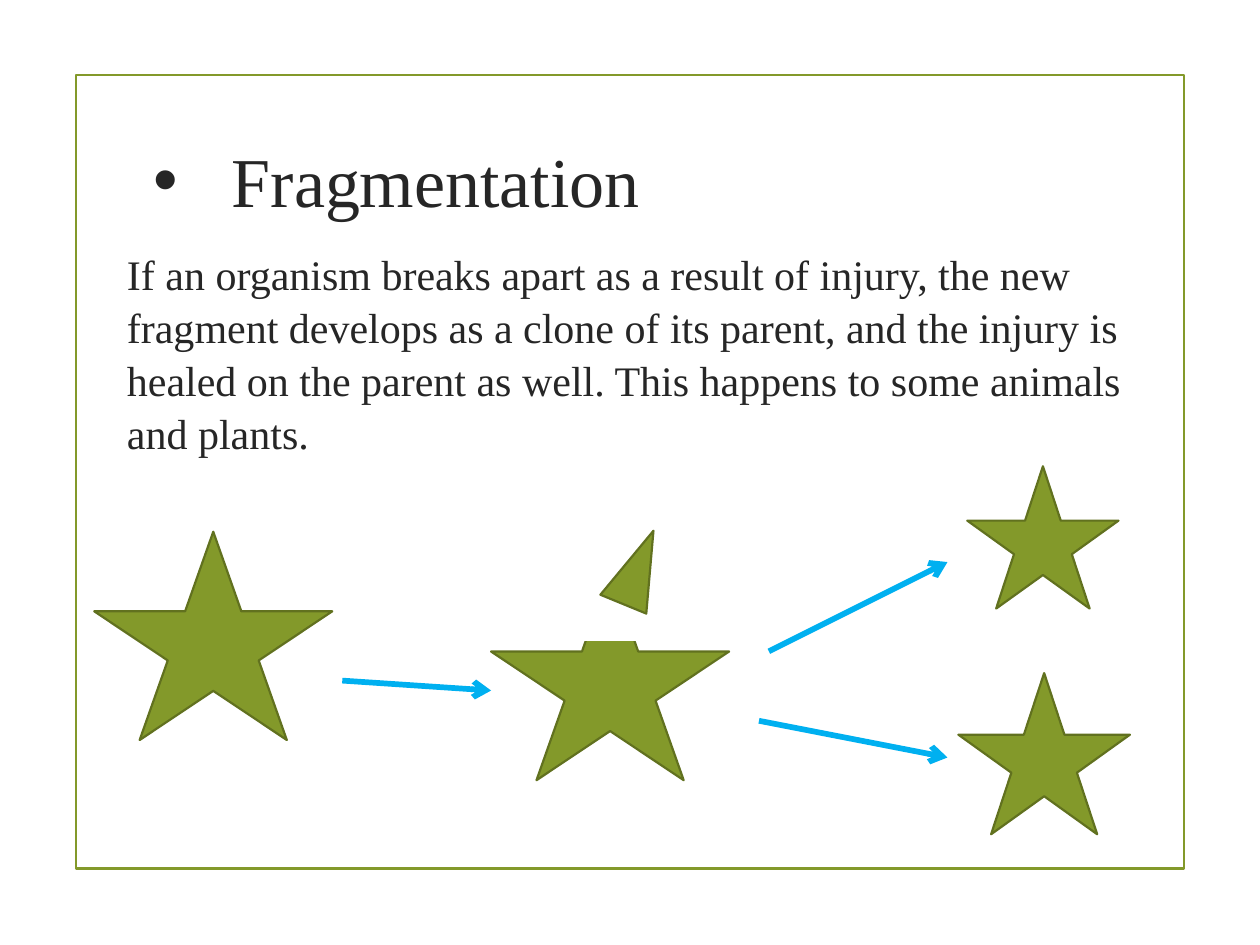
from lxml import etree
from pptx import Presentation
from pptx import util as u
from pptx.dml.color import RGBColor
from pptx.enum import shapes, text
from pptx.oxml import ns

GREEN = RGBColor(0x83, 0x99, 0x2A)
EDGE = RGBColor(0x61, 0x71, 0x1F)
BLUE = RGBColor(0x00, 0xB0, 0xF0)
INK = RGBColor(0x26, 0x26, 0x26)
WHITE = RGBColor(0xFF, 0xFF, 0xFF)
KIND = shapes.MSO_SHAPE

FACE = {"name": "Times New Roman", "bold": False}
BODY = (
    "If an organism breaks apart as a result of injury, the new fragment "
    "develops as a clone of its parent, and the injury is healed on the "
    "parent as well. This happens to some animals and plants."
)

# Left, top, width, height in cm
STARS = [
    (1.9, 10.72, 4.8, 4.2),
    (9.9, 11.53, 4.8, 4.2),
    (19.5, 9.4, 3.05, 2.87),
    (19.32, 13.57, 3.46, 3.25),
]
# Start x, y and end x, y in cm
ARROWS = [
    (6.9, 13.72, 9.9, 13.92),
    (15.5, 13.13, 19.1, 11.33),
    (15.3, 14.53, 19.1, 15.27),
]


def put(obj, vals):
    for key, val in vals.items():
        setattr(obj, key, val)


def cms(box):
    return [u.Cm(val) for val in box]


def sub(node, tag, **vals):
    return etree.SubElement(node, ns.qn(tag), **vals)


def add_form(slide, kind, box, fill=None, edge=None, turn=0):
    form = slide.shapes.add_shape(kind, *cms(box))
    put(form, {"rotation": turn})
    form.shadow.inherit = False
    if fill is None:
        form.fill.background()
    else:
        form.fill.solid()
        form.fill.fore_color.rgb = fill
    if edge is None:
        form.line.fill.background()
    else:
        form.line.color.rgb = edge
        form.line.width = u.Pt(1.25)


def add_arrow(slide, ends):
    line = slide.shapes.add_connector(shapes.MSO_CONNECTOR.STRAIGHT, *cms(ends))
    line.line.color.rgb = BLUE
    line.line.width = u.Pt(3.25)
    sub(line.line._get_or_add_ln(), "a:tailEnd", type="arrow")
    sub(line._element.spPr, "a:effectLst")


def write(shape, words, size, anchor):
    frame = shape.text_frame
    put(frame, {
        "word_wrap": True,
        "auto_size": text.MSO_AUTO_SIZE.NONE,
        "vertical_anchor": anchor,
    })
    para = frame.paragraphs[0]
    para.alignment = text.PP_ALIGN.LEFT
    run = para.add_run()
    run.text = words
    put(run.font, {**FACE, "size": u.Pt(size)})
    run.font.color.rgb = INK
    return para


def add_title(slide):
    title = slide.shapes.title
    left, top, width, height = cms((2.84, 1.8, 18.9, 3.63))
    put(title, {"left": left, "top": top, "width": width, "height": height})
    para = write(title, "Fragmentation", 40, text.MSO_ANCHOR.MIDDLE)
    # Bullet with a hanging indent
    props = para._p.get_or_add_pPr()
    hang = u.Cm(1.58)
    props.set("marL", str(hang))
    props.set("indent", str(-hang))
    sub(props, "a:buFont", typeface="Arial")
    sub(props, "a:buChar", char="•")


def add_body(slide):
    box = slide.shapes.add_textbox(*cms((2.31, 4.84, 21.59, 5)))
    para = write(box, BODY, 24, text.MSO_ANCHOR.TOP)
    put(para, {"line_spacing": 1.05, "space_after": u.Pt(6)})


def main():
    deck = Presentation()
    put(deck, {"slide_width": u.Cm(25.4), "slide_height": u.Cm(19.05)})
    slide = deck.slides.add_slide(deck.slide_layouts[5])

    # Frame and wording
    add_form(slide, KIND.RECTANGLE, (1.54, 1.51, 22.33, 16), edge=GREEN)
    add_title(slide)
    add_body(slide)

    # Whole star, then the one that loses its tip
    for box in STARS[:2]:
        add_form(slide, KIND.STAR_5_POINT, box, GREEN, EDGE)
    add_form(slide, KIND.RECTANGLE, (11.3, 10.32, 2.2, 2.6), WHITE)
    add_form(slide, KIND.ISOSCELES_TRIANGLE, (12.37, 10.64, 1, 1.6),
             GREEN, EDGE, 22.3)

    # The two clones
    for box in STARS[2:]:
        add_form(slide, KIND.STAR_5_POINT, box, GREEN, EDGE)
    for ends in ARROWS:
        add_arrow(slide, ends)

    deck.save("out.pptx")


if __name__ == "__main__":
    main()
